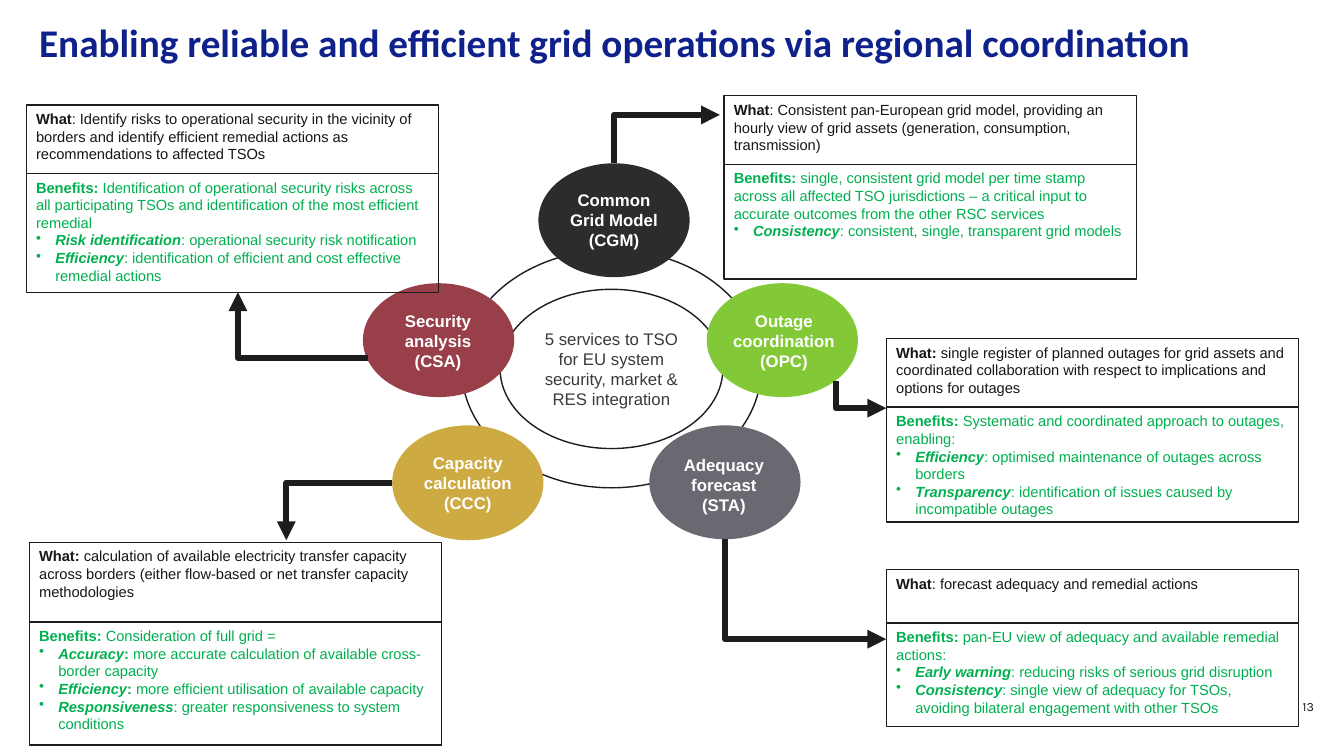
from dataclasses import dataclass

from lxml.etree import SubElement
from pptx import Presentation
from pptx.dml.color import RGBColor
from pptx.enum.shapes import MSO_CONNECTOR as Link, MSO_SHAPE as Shape
from pptx.enum.text import MSO_ANCHOR as Anchor, PP_ALIGN as Align
from pptx.oxml.ns import qn
from pptx.util import Inches, Pt


@dataclass(frozen=True)
class Theme:
    font: str = "Arial"
    title_font: str = "Calibri"
    number_font: str = "Karla"
    title: str = "0F218B"
    ink: str = "1D1D20"
    body: str = "181717"
    benefit: str = "00B050"
    centre: str = "3A3A3F"
    white: str = "FFFFFF"
    title_size: float = 28
    label_size: float = 12
    body_size: float = 10.5
    number_size: float = 9
    thin: float = 1
    thick: float = 4.5


THEME = Theme()
PANEL_WIDTH = 4.09
BULLET_INDENT = Inches(0.19)


def write(frame, paragraphs, size, color, font=THEME.font, align=Align.LEFT,
          anchor=Anchor.TOP, spacing=None, bullets_from=None):
    """Fill a frame; each paragraph is a list of (text, style letters)."""
    frame.word_wrap = True
    frame.vertical_anchor = anchor
    for index, spans in enumerate(paragraphs):
        para = frame.add_paragraph() if index else frame.paragraphs[0]
        para.alignment = align
        if spacing:
            para.line_spacing = Pt(spacing)
        if bullets_from is not None and index >= bullets_from:
            props = para._p.get_or_add_pPr()
            props.set("marL", str(BULLET_INDENT))
            props.set("indent", str(-BULLET_INDENT))
            SubElement(props, qn("a:buChar")).set("char", "•")
        for text, style in spans:
            span = para.add_run()
            span.text = text
            span.font.name = font
            span.font.size = Pt(size)
            span.font.color.rgb = RGBColor.from_string(color)
            span.font.bold = "b" in style
            span.font.italic = "i" in style


class Sketch:
    def __init__(self, slide, theme):
        self.slide = slide
        self.theme = theme

    def text(self, area, paragraphs, size, color, **style):
        box = self.slide.shapes.add_textbox(*map(Inches, area))
        write(box.text_frame, paragraphs, size, color, **style)

    def shape(self, kind, area, fill=None, line=None):
        box = self.slide.shapes.add_shape(kind, *map(Inches, area))
        box.shadow.inherit = False
        if fill:
            box.fill.solid()
            box.fill.fore_color.rgb = RGBColor.from_string(fill)
        else:
            box.fill.background()
        if line:
            box.line.color.rgb = RGBColor.from_string(line)
            box.line.width = Pt(self.theme.thin)
        else:
            box.line.fill.background()
        return box

    def service(self, area, fill, label_area, name, code):
        self.shape(Shape.OVAL, area, fill)
        self.text(label_area, [[(name, "b")], [(code, "b")]],
                  self.theme.label_size, self.theme.white, align=Align.CENTER)

    def panel(self, left, top, heights, what, benefit, bullets, fill=None):
        """Stack the What box on the Benefits box."""
        what_height, benefit_height = heights
        points = [[(text, style) for text, style in zip(point, ("bi", "b", "")) if text]
                  for point in bullets]
        rows = (
            (top, what_height, [list(zip(what, ("b", "")))], self.theme.body),
            (top + what_height, benefit_height,
             [[("Benefits: ", "b"), (benefit, "")]] + points, self.theme.benefit),
        )
        for row_top, height, paragraphs, color in rows:
            box = self.shape(Shape.RECTANGLE, (left, row_top, PANEL_WIDTH, height),
                             fill, self.theme.ink)
            write(box.text_frame, paragraphs, self.theme.body_size, color, bullets_from=1)

    def bent_arrow(self, start, end, vertical_first=False):
        (x1, y1), (x2, y2) = start, end
        if vertical_first:
            # Unrotated ends, a quarter turn back around the centre
            mid_x, mid_y = (x1 + x2) / 2, (y1 + y2) / 2
            half_x, half_y = (x2 - x1) / 2, (y2 - y1) / 2
            x1, y1 = mid_x - half_y, mid_y + half_x
            x2, y2 = mid_x + half_y, mid_y - half_x
        arrow = self.slide.shapes.add_connector(
            Link.ELBOW, *map(Inches, (x1, y1, x2, y2)))
        arrow.line.color.rgb = RGBColor.from_string(self.theme.ink)
        arrow.line.width = Pt(self.theme.thick)
        props = arrow._element.spPr
        props.find(qn("a:prstGeom")).set("prst", "bentConnector2")
        if vertical_first:
            props.find(qn("a:xfrm")).set("rot", "5400000")
        SubElement(props.find(qn("a:ln")), qn("a:tailEnd")).set("type", "triangle")
        SubElement(props, qn("a:effectLst"))


# Oval area, colour, label area, name, code
SERVICES = [
    ((3.6, 2.81, 1.5, 1.13), "983F4A", (3.88, 3.03, 0.93, 0.71), "Security analysis", "(CSA)"),
    ((5.34, 1.62, 1.5, 1.13), "2C2C2C", (5.49, 1.83, 1.2, 0.71), "Common Grid Model", "(CGM)"),
    ((6.44, 4.22, 1.5, 1.13), "696972", (6.66, 4.46, 1.04, 0.71), "Adequacy forecast", "(STA)"),
    ((7.01, 2.81, 1.5, 1.13), "83C937", (7.14, 3.03, 1.27, 0.71), "Outage coordination", "(OPC)"),
    ((3.89, 4.22, 1.5, 1.14), "CDAB42", (4.08, 4.44, 1.12, 0.71), "Capacity calculation", "(CCC)"),
]

# Left, top, heights, what, benefit, bullets as (term, bold text, plain text), fill
PANELS = [
    (0.29, 5.38, (0.79, 1.22),
     ("What: ", "calculation of available electricity transfer capacity across borders "
      "(either flow-based or net transfer capacity methodologies"),
     "Consideration of full grid =",
     [("Accuracy", ": ", "more accurate calculation of available cross-border capacity"),
      ("Efficiency", ": ", "more efficient utilisation of available capacity"),
      ("Responsiveness", "", ": greater responsiveness to system conditions")]),
    (8.79, 3.36, (0.68, 1.14),
     ("What: ", "single register of planned outages for grid assets and coordinated "
      "collaboration with respect to implications and options for outages"),
     "Systematic and coordinated approach to outages, enabling:",
     [("Efficiency", "", ": optimised maintenance of outages across borders"),
      ("Transparency", "", ": identification of issues caused by incompatible outages")]),
    (8.79, 5.65, (0.53, 1.03),
     ("What", ": forecast adequacy and remedial actions"),
     "pan-EU view of adequacy and available remedial actions:",
     [("Early warning", "", ": reducing risks of serious grid disruption"),
      ("Consistency", "", ": single view of adequacy for TSOs, avoiding bilateral "
       "engagement with other TSOs")], THEME.white),
    (7.18, 0.95, (0.68, 1.14),
     ("What", ": Consistent pan-European grid model, providing an hourly view of grid "
      "assets (generation, consumption, transmission)"),
     "single, consistent grid model per time stamp across all affected TSO jurisdictions "
     "– a critical input to accurate outcomes from the other RSC services",
     [("Consistency", "", ": consistent, single, transparent grid models")]),
    (0.26, 1.04, (0.68, 1.18),
     ("What", ": Identify risks to operational security in the vicinity of borders and "
      "identify efficient remedial actions as recommendations to affected TSOs"),
     "Identification of operational security risks across all participating TSOs and "
     "identification of the most efficient remedial",
     [("Risk identification", "", ": operational security risk notification"),
      ("Efficiency", "", ": identification of efficient and cost effective remedial actions")]),
]

# Start, end, whether the first leg is vertical
ARROWS = [
    ((3.89, 4.79), (2.84, 5.36), False),
    ((8.29, 3.78), (8.79, 4.05), True),
    ((7.19, 5.35), (8.79, 6.34), True),
    ((3.65, 3.55), (2.36, 2.9), False),
    ((6.09, 1.62), (7.14, 1.14), True),
]


def main():
    deck = Presentation()
    deck.slide_width, deck.slide_height = Inches(13.33), Inches(7.5)
    page = Sketch(deck.slides.add_slide(deck.slide_layouts[6]), THEME)

    # Page number and title
    page.text((6.75, 6.82, 6.38, 0.4), [[("13", "")]], THEME.number_size, THEME.ink,
              font=THEME.number_font, align=Align.RIGHT, anchor=Anchor.MIDDLE, spacing=9)
    title = "Enabling reliable and efficient grid operations via regional coordination"
    page.text((0.29, 0.29, 12.76, 0.39), [[(title, "b")]], THEME.title_size, THEME.title,
              font=THEME.title_font, anchor=Anchor.MIDDLE, spacing=23.6)

    # Hub and ring
    hub = page.shape(Shape.OVAL, (4.96, 2.87, 2.21, 1.58), THEME.white, THEME.ink)
    write(hub.text_frame,
          [[("5 services to TSO for EU system security, market & RES integration", "")]],
          THEME.label_size, THEME.centre, align=Align.CENTER, anchor=Anchor.MIDDLE)
    page.shape(Shape.OVAL, (4.58, 2.48, 2.97, 2.36), line=THEME.ink)

    # Services, their panels and the arrows between them
    for service in SERVICES:
        page.service(*service)
    for panel in PANELS:
        page.panel(*panel)
    for arrow in ARROWS:
        page.bent_arrow(*arrow)

    deck.save("out.pptx")


if __name__ == "__main__":
    main()
